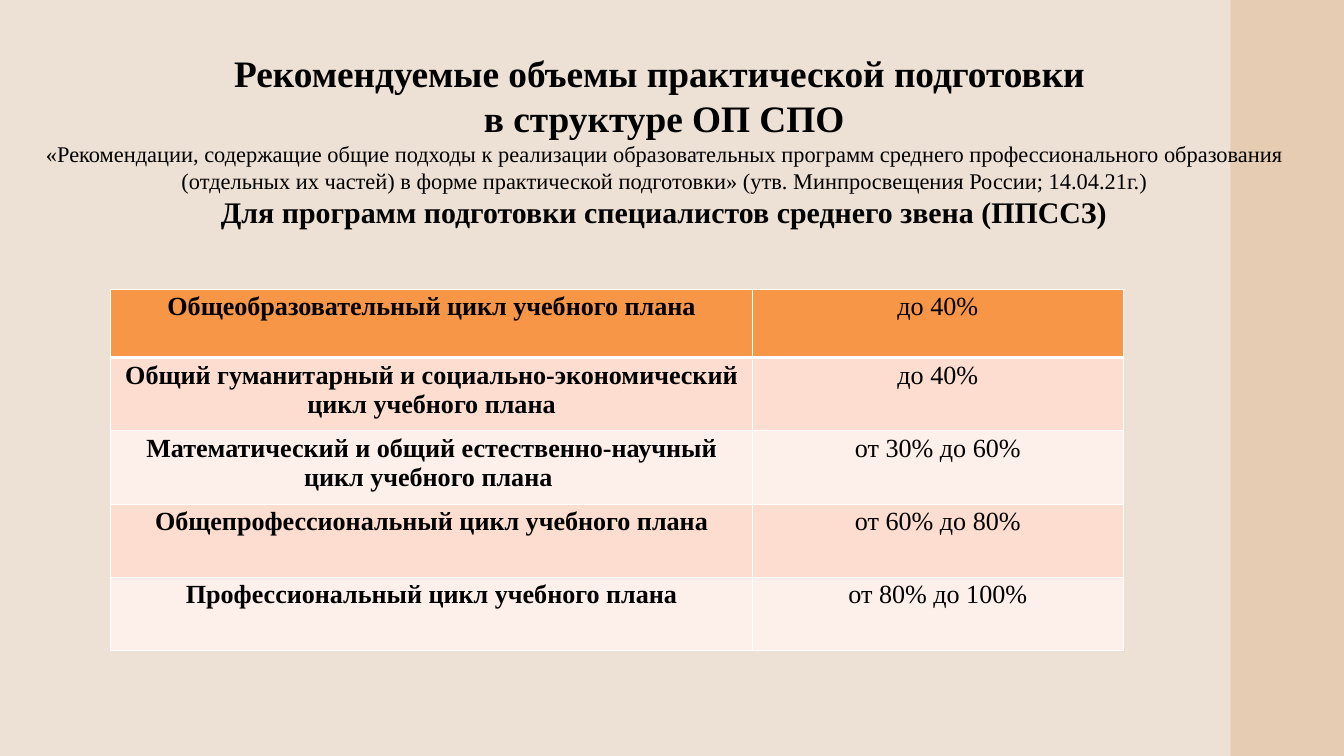
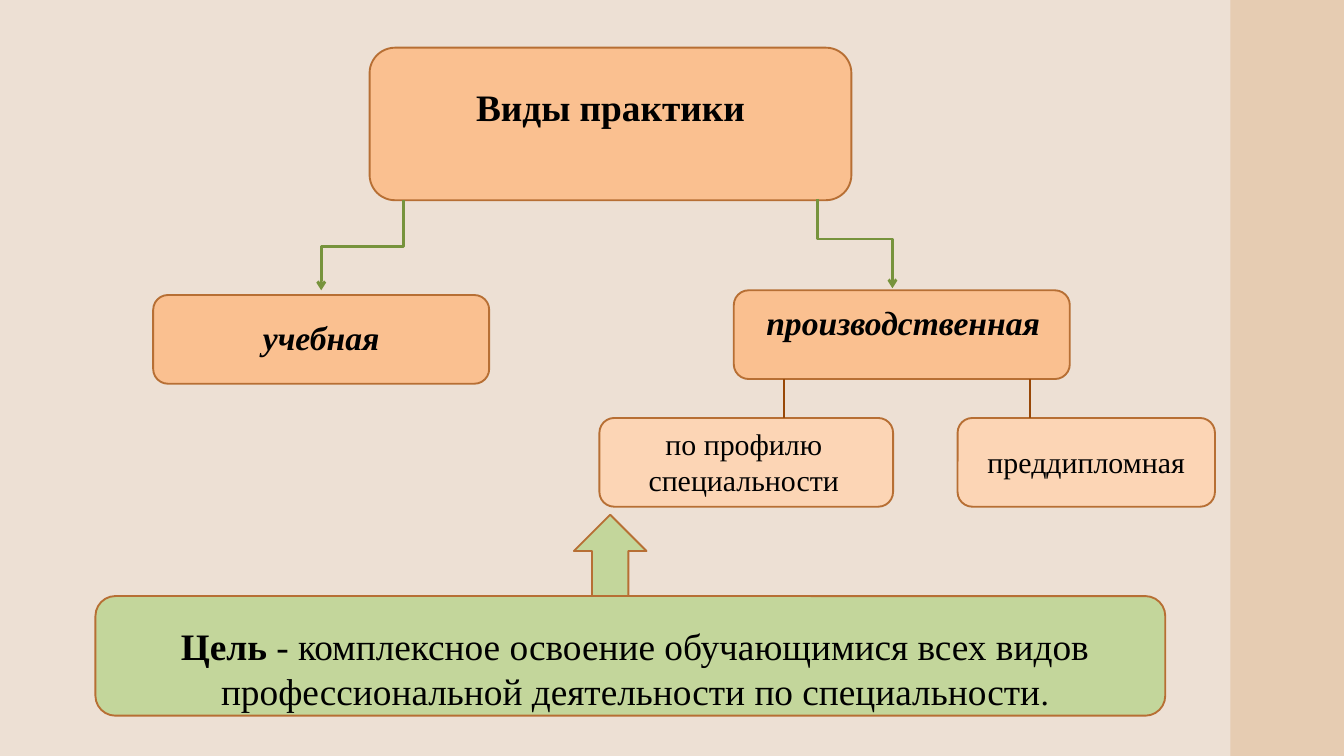
"""Build two slides on practical training: a table of volumes and a diagram of practice types."""
from dataclasses import dataclass

from lxml import etree
from pptx import Presentation
from pptx.dml.color import RGBColor
from pptx.enum.shapes import MSO_CONNECTOR, MSO_SHAPE
from pptx.enum.text import MSO_AUTO_SIZE, PP_ALIGN
from pptx.oxml.ns import qn
from pptx.util import Inches, Pt

ROUNDED = MSO_SHAPE.ROUNDED_RECTANGLE
RECTANGLE = MSO_SHAPE.RECTANGLE
UP_ARROW = MSO_SHAPE.UP_ARROW
STRAIGHT = MSO_CONNECTOR.STRAIGHT
ELBOW = MSO_CONNECTOR.ELBOW
CENTER = PP_ALIGN.CENTER
GROW = MSO_AUTO_SIZE.SHAPE_TO_FIT_TEXT

FONT = "Times New Roman"
SLIDE_WIDTH, SLIDE_HEIGHT = 20, 11.25
BAND_LEFT = 18.31
COLORS = {
    "background": "EDE0D4",
    "band": "E6CCB2",
    "text": "000000",
    "header": "F79646",
    "row_dark": "FCDDCF",
    "row_light": "FDEFE9",
    "border": "FFFFFF",
    "orange": "FAC090",
    "peach": "FCD5B5",
    "green": "C3D69B",
    "outline": "B76F34",
    "arrow": "77933C",
    "branch": "984807",
}


@dataclass(frozen=True)
class Box:
    left: float
    top: float
    width: float
    height: float

    def lengths(self) -> list:
        return [Inches(value) for value in (self.left, self.top, self.width, self.height)]


@dataclass(frozen=True)
class TextRun:
    text: str
    size: float
    bold: bool = False
    italic: bool = False


@dataclass(frozen=True)
class Panel:
    box: Box
    fill: str
    caption_box: Box
    runs: tuple


@dataclass(frozen=True)
class BentArrow:
    start: tuple
    end: tuple
    bend: float


@dataclass(frozen=True)
class VolumeRow:
    cycle: str
    share: str


TITLE_BOX = Box(0.55, 0.7, 18.67, 2.86)
TITLE_LINES = (
    TextRun("Рекомендуемые объемы практической подготовки ", 40, True),
    TextRun("в структуре ОП СПО", 40, True),
    TextRun(
        "«Рекомендации, содержащие общие подходы к реализации образовательных программ "
        "среднего профессионального образования (отдельных их частей) в форме практической "
        "подготовки» (утв. Минпросвещения России; 14.04.21г.)",
        24,
    ),
    TextRun("Для программ подготовки специалистов среднего звена (ППССЗ)", 32, True),
)

TABLE_BOX = Box(1.64, 4.3, 15.07, 5.38)
COLUMN_WIDTHS = (9.56, 5.51)
HEADER_HEIGHT, ROW_HEIGHT = 1.02, 1.09
VOLUMES = (
    VolumeRow("Общеобразовательный цикл учебного плана", "до 40%"),
    VolumeRow("Общий гуманитарный и социально-экономический цикл учебного плана", "до 40%"),
    VolumeRow("Математический и общий естественно-научный цикл учебного плана ", "от 30% до 60%"),
    VolumeRow("Общепрофессиональный цикл учебного плана", "от 60% до 80%"),
    VolumeRow("Профессиональный цикл учебного плана", "от 80% до 100%"),
)

PRACTICE_PANELS = (
    Panel(Box(5.5, 0.71, 7.17, 2.27), "orange", Box(6, 1.21, 6.17, 0.77),
          (TextRun("Виды практики", 40, True),)),
    Panel(Box(2.28, 4.39, 5, 1.32), "orange", Box(2.49, 4.66, 4.58, 0.71),
          (TextRun("учебная", 36, True, True),)),
    Panel(Box(10.92, 4.32, 5, 1.32), "orange", Box(11.02, 4.45, 4.84, 0.71),
          (TextRun("производственная", 36, True, True),)),
    Panel(Box(8.92, 6.22, 4.37, 1.32), "peach", Box(8.92, 6.29, 4.3, 1.18),
          (TextRun("по профилю специальности", 32),)),
    Panel(Box(14.25, 6.22, 3.83, 1.32), "peach", Box(14.25, 6.56, 3.83, 0.64),
          (TextRun("преддипломная", 32),)),
)
GOAL_PANEL = Panel(
    Box(1.42, 8.87, 15.92, 1.78), "green", Box(1.95, 9.22, 15, 1.45),
    (
        TextRun("Цель", 40, True),
        TextRun(" - комплексное освоение обучающимися всех видов "
                "профессиональной деятельности по специальности", 40),
        TextRun(".", 36),
    ),
)
GOAL_ARROW = Box(8.54, 7.66, 1.08, 1.39)
BENT_ARROWS = (
    BentArrow((6, 2.98), (4.78, 4.32), 0.51),
    BentArrow((12.16, 2.96), (13.28, 4.29), 0.45),
)
BRANCH_POSITIONS = (11.67, 15.33)
BRANCH_TOP, BRANCH_BOTTOM = 5.64, 6.22


def rgb(name: str) -> RGBColor:
    return RGBColor.from_string(COLORS[name])


def add_runs(paragraph, runs: tuple) -> None:
    paragraph.alignment = CENTER
    for item in runs:
        run = paragraph.add_run()
        run.text = item.text
        formats = {"name": FONT, "size": Pt(item.size), "bold": item.bold, "italic": item.italic}
        for attribute, value in formats.items():
            setattr(run.font, attribute, value)
        run.font.color.rgb = rgb("text")


def add_text(slide, box: Box, paragraphs: tuple) -> None:
    frame = slide.shapes.add_textbox(*box.lengths()).text_frame
    for attribute, value in {"word_wrap": True, "auto_size": GROW}.items():
        setattr(frame, attribute, value)
    for index, runs in enumerate(paragraphs):
        paragraph = frame.add_paragraph() if index else frame.paragraphs[0]
        add_runs(paragraph, runs)


def add_block(slide, kind, box: Box, fill: str, outline: str = "") -> None:
    shape = slide.shapes.add_shape(kind, *box.lengths())
    shape.shadow.inherit = False
    shape.fill.solid()
    shape.fill.fore_color.rgb = rgb(fill)
    if outline:
        shape.line.color.rgb = rgb(outline)
        shape.line.width = Pt(2)
    else:
        shape.line.fill.background()


def add_panel(slide, panel: Panel) -> None:
    add_block(slide, ROUNDED, panel.box, panel.fill, "outline")
    add_text(slide, panel.caption_box, (panel.runs,))


def add_line(slide, kind, start: tuple, end: tuple, color: str, width: float):
    points = [Inches(value) for value in (*start, *end)]
    connector = slide.shapes.add_connector(kind, *points)
    connector.line.color.rgb = rgb(color)
    connector.line.width = Pt(width)
    etree.SubElement(connector.element.spPr, qn("a:effectLst"))
    return connector


def add_bent_arrow(slide, arrow: BentArrow) -> None:
    (start_x, start_y), (end_x, end_y) = arrow.start, arrow.end
    center_x, center_y = (start_x + end_x) / 2, (start_y + end_y) / 2
    goes_left = end_x < start_x
    half_run = (end_y - start_y) / 2 * (1 if goes_left else -1)
    half_rise = abs(end_x - start_x) / 2
    connector = add_line(
        slide, ELBOW,
        (center_x - half_run, center_y - half_rise),
        (center_x + half_run, center_y + half_rise),
        "arrow", 3,
    )
    properties = connector.element.spPr
    properties.find(qn("a:xfrm")).set("rot", str((90 if goes_left else 270) * 60000))
    adjustments = properties.find(qn("a:prstGeom")).find(qn("a:avLst"))
    etree.SubElement(adjustments, qn("a:gd"), name="adj1", fmla=f"val {round(arrow.bend * 100000)}")
    etree.SubElement(properties.find(qn("a:ln")), qn("a:tailEnd"), type="arrow")


def add_borders(cell, row_index: int) -> None:
    widths = {"lnL": 1, "lnR": 1, "lnT": 3 if row_index == 1 else 1, "lnB": 1 if row_index else 3}
    properties = cell._tc.get_or_add_tcPr()
    for side, width in widths.items():
        line = etree.SubElement(properties, qn(f"a:{side}"), w=str(Pt(width)))
        fill = etree.SubElement(line, qn("a:solidFill"))
        etree.SubElement(fill, qn("a:srgbClr"), val=COLORS["border"])


def add_volume_table(slide) -> None:
    table = slide.shapes.add_table(len(VOLUMES), len(COLUMN_WIDTHS), *TABLE_BOX.lengths()).table
    for column, width in zip(table.columns, COLUMN_WIDTHS):
        column.width = Inches(width)
    for row_index, volume in enumerate(VOLUMES):
        table.rows[row_index].height = Inches(ROW_HEIGHT if row_index else HEADER_HEIGHT)
        band = "row_dark" if row_index % 2 else "row_light"
        for column_index, text in enumerate((volume.cycle, volume.share)):
            cell = table.cell(row_index, column_index)
            add_borders(cell, row_index)
            cell.fill.solid()
            cell.fill.fore_color.rgb = rgb(band if row_index else "header")
            add_runs(cell.text_frame.paragraphs[0], (TextRun(text, 28, column_index == 0),))


def add_base_slide(presentation):
    slide = presentation.slides.add_slide(presentation.slide_layouts[6])
    slide.background.fill.solid()
    slide.background.fill.fore_color.rgb = rgb("background")
    band = Box(BAND_LEFT, 0, SLIDE_WIDTH - BAND_LEFT, SLIDE_HEIGHT)
    add_block(slide, RECTANGLE, band, "band")
    return slide


def build_volumes_slide(presentation) -> None:
    slide = add_base_slide(presentation)
    add_text(slide, TITLE_BOX, tuple((line,) for line in TITLE_LINES))
    add_volume_table(slide)


def build_practice_slide(presentation) -> None:
    slide = add_base_slide(presentation)
    for panel in PRACTICE_PANELS:
        add_panel(slide, panel)
    for arrow in BENT_ARROWS:
        add_bent_arrow(slide, arrow)
    for position in BRANCH_POSITIONS:
        add_line(slide, STRAIGHT, (position, BRANCH_TOP), (position, BRANCH_BOTTOM), "branch", 2.25)
    add_block(slide, UP_ARROW, GOAL_ARROW, "green", "outline")
    add_panel(slide, GOAL_PANEL)


def main() -> None:
    presentation = Presentation()
    presentation.slide_width = Inches(SLIDE_WIDTH)
    presentation.slide_height = Inches(SLIDE_HEIGHT)
    build_volumes_slide(presentation)
    build_practice_slide(presentation)
    presentation.save("out.pptx")


if __name__ == "__main__":
    main()
